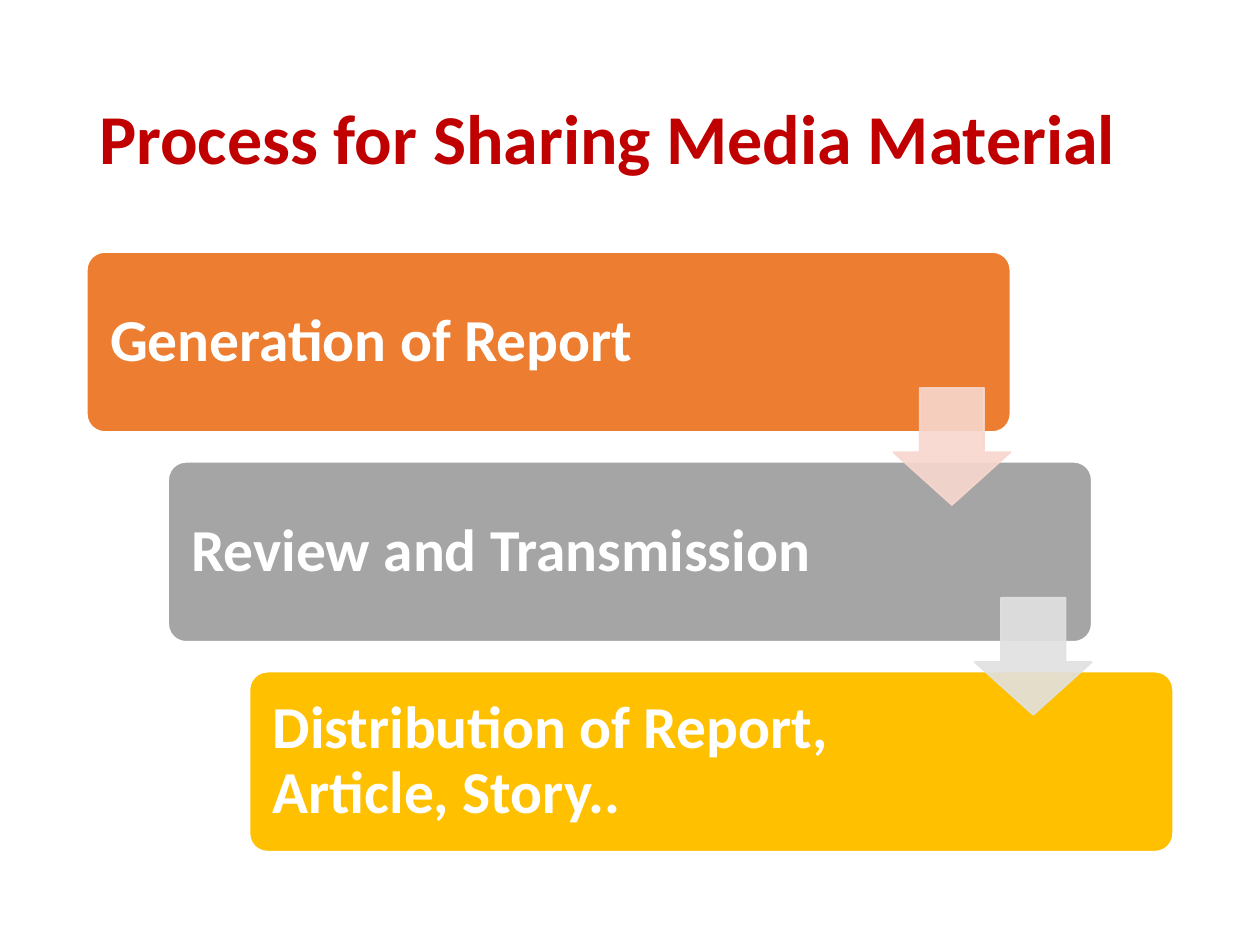
"""Build a slide with a three-step staircase process."""
from dataclasses import dataclass

from lxml import etree
from pptx import Presentation
from pptx.dml.color import RGBColor
from pptx.enum.shapes import MSO_SHAPE
from pptx.enum.text import MSO_ANCHOR
from pptx.oxml.ns import qn
from pptx.util import Cm, Pt

ROUNDED = MSO_SHAPE.ROUNDED_RECTANGLE
DOWN_ARROW = MSO_SHAPE.DOWN_ARROW
MIDDLE = MSO_ANCHOR.MIDDLE

COLORS = {
    "title": "C00000",
    "white": "FFFFFF",
    "orange": "ED7D31",
    "gray": "A5A5A5",
    "gold": "FFC000",
    "pale_orange": "F8D7CE",
    "pale_gray": "E1E1E1",
}
FONT = "Calibri"
STEP_X, STEP_Y = 1.64, 4.23
LEFT, TOP = 1.75, 5.08
CARD_W, CARD_H = 18.62, 3.63
TEXT_GAP = 0.11
ARROW_LEFT, ARROW_TOP, ARROW_SIZE = 18.01, 7.82, 2.36


@dataclass(frozen=True)
class Box:
    left: float
    top: float
    width: float
    height: float

    def lengths(self) -> list:
        return [Cm(v) for v in (self.left, self.top, self.width, self.height)]


@dataclass(frozen=True)
class Step:
    text: str
    color: str
    text_width: float = 14.4


STEPS = [
    Step("Generation of Report", "orange", 14.71),
    Step("Review and Transmission", "gray"),
    Step("Distribution of Report, Article, Story..", "gold"),
]
ARROWS = ["pale_orange", "pale_gray"]


def rgb(name: str) -> RGBColor:
    return RGBColor.from_string(COLORS[name])


def add_text(s, box: Box, text: str, size: int, color: str,
             inset_x: float, inset_y: float) -> None:
    tf = s.shapes.add_textbox(*box.lengths()).text_frame
    tf.word_wrap = True
    tf.vertical_anchor = MIDDLE
    tf.margin_left = tf.margin_right = Cm(inset_x)
    tf.margin_top = tf.margin_bottom = Cm(inset_y)
    p = tf.paragraphs[0]
    p.line_spacing = 0.9
    r = p.add_run()
    r.text = text
    r.font.name = FONT
    r.font.size = Pt(size)
    r.font.bold = True
    r.font.color.rgb = rgb(color)


def add_block(s, kind, box: Box, adjustments: list[float], fill: str, line: str):
    sp = s.shapes.add_shape(kind, *box.lengths())
    sp.shadow.inherit = False
    for i, value in enumerate(adjustments):
        sp.adjustments[i] = value
    sp.fill.solid()
    sp.fill.fore_color.rgb = rgb(fill)
    sp.line.color.rgb = rgb(line)
    sp.line.width = Pt(1)
    return sp


def add_step(s, index: int, step: Step) -> None:
    left, top = LEFT + index * STEP_X, TOP + index * STEP_Y
    card = Box(left, top, CARD_W, CARD_H)
    add_block(s, ROUNDED, card, [0.1], step.color, "white")
    label = Box(left + TEXT_GAP, top + TEXT_GAP,
                step.text_width, CARD_H - 2 * TEXT_GAP)
    add_text(s, label, step.text, 34, "white", 0.36, 0.36)


def add_arrow(s, index: int, color: str) -> None:
    box = Box(ARROW_LEFT + index * STEP_X, ARROW_TOP + index * STEP_Y,
              ARROW_SIZE, ARROW_SIZE)
    sp = add_block(s, DOWN_ARROW, box, [0.55, 0.45], color, color)
    for clr in sp.element.spPr.iter(qn("a:srgbClr")):
        etree.SubElement(clr, qn("a:alpha"), val="90000")


def main() -> None:
    prs = Presentation()
    prs.slide_width, prs.slide_height = Cm(25.4), Cm(19.05)
    s = prs.slides.add_slide(prs.slide_layouts[6])
    add_text(s, Box(LEFT, 1.02, 21.9, 3.68), "Process for Sharing Media Material",
             40, "title", 0.25, 0.13)
    for i, step in enumerate(STEPS):
        add_step(s, i, step)
    for i, color in enumerate(ARROWS):
        add_arrow(s, i, color)
    prs.save("out.pptx")


if __name__ == "__main__":
    main()
